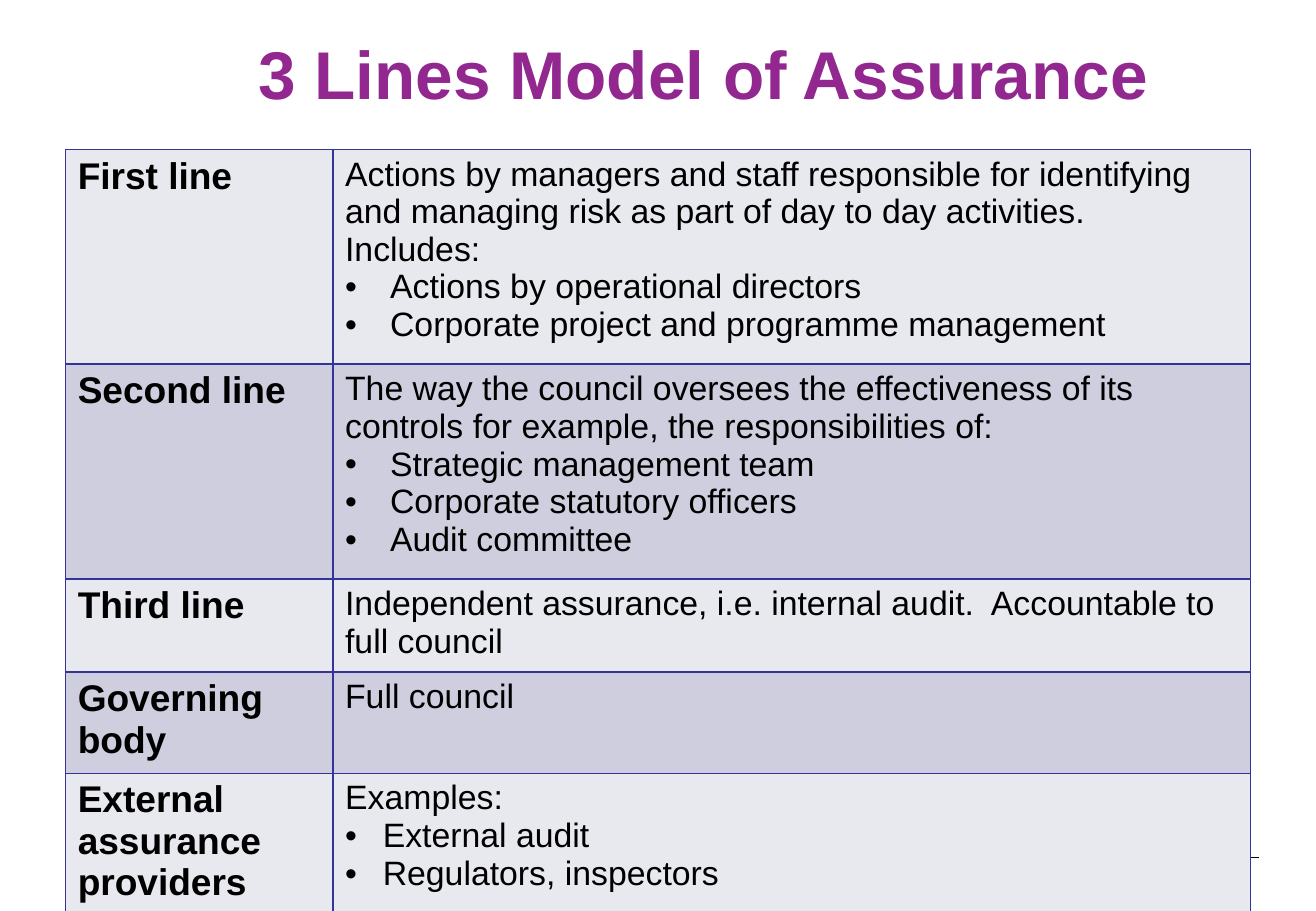
from pptx import Presentation
from pptx import util as u
from pptx.dml.color import RGBColor
from pptx.enum import shapes, text
from pptx.oxml.ns import qn
from lxml import etree

# Content: label, lead text, bullets, bullet indent
TITLE = "3 Lines Model of Assurance"
ROWS = [
    ("First line",
     "Actions by managers and staff responsible for identifying and managing "
     "risk as part of day to day activities.  Includes:",
     ["Actions by operational directors",
      "Corporate project and programme management"], 37),
    ("Second line",
     "The way the council oversees the effectiveness of its controls "
     "for example, the responsibilities of:",
     ["Strategic management team", "Corporate statutory officers",
      "Audit committee"], 37),
    ("Third line",
     "Independent assurance, i.e. internal audit.  Accountable to full council",
     [], 0),
    ("Governing body", "Full council", [], 0),
    ("External assurance providers", "Examples:",
     ["External audit", "Regulators, inspectors"], 31),
]
COLS = (220, 755)
TALL = 48  # least row height; rows grow to fit their text
FILLS = ("E8E8EF", "CECEDE")
BORDER, BLACK, PURPLE = "333399", "000000", "91278F"


def px(n):
    return u.Emu(n * 9144)  # 100 px to the inch


def color(code):
    return RGBColor.from_string(code)


def style(par, size, bold, code=BLACK):
    font = par.font
    font.name, font.size, font.bold = "Arial", u.Pt(size), bold
    font.color.rgb = color(code)


def bullet(par, indent):
    props = par._p.get_or_add_pPr()
    props.set("marL", str(px(indent)))
    props.set("indent", str(-px(indent)))
    etree.SubElement(props, qn("a:buFont"), typeface="Arial")
    etree.SubElement(props, qn("a:buChar"), char="•")


def frame(cell, code):
    cell.fill.solid()
    cell.fill.fore_color.rgb = color(code)
    props = cell._tc.get_or_add_tcPr()
    for i, side in enumerate(("lnL", "lnR", "lnT", "lnB")):
        line = etree.Element(qn("a:" + side), w=str(u.Pt(1)))
        fill = etree.SubElement(line, qn("a:solidFill"))
        etree.SubElement(fill, qn("a:srgbClr"), val=BORDER)
        props.insert(i, line)


def main():
    prs = Presentation()
    prs.slide_width, prs.slide_height = px(1083), px(750)
    slide = prs.slides.add_slide(prs.slide_layouts[6])

    # Footer rule behind the table
    rule = slide.shapes.add_connector(
        shapes.MSO_CONNECTOR.STRAIGHT, px(64), px(706), px(1036), px(706))
    rule.line.color.rgb = color(BLACK)
    rule.line.width = u.Pt(0.75)
    etree.SubElement(rule._element.spPr, qn("a:effectLst"))

    # Title
    head = slide.shapes.add_textbox(px(203), px(28), px(787), px(63)).text_frame
    head.word_wrap = True
    head.vertical_anchor = text.MSO_ANCHOR.MIDDLE
    head.text = TITLE
    style(head.paragraphs[0], 40, True, PURPLE)

    # Table
    table = slide.shapes.add_table(
        len(ROWS), len(COLS), px(54), px(123),
        px(sum(COLS)), px(TALL * len(ROWS))).table
    table.first_row = table.horz_banding = False
    for col, width in zip(table.columns, COLS):
        col.width = px(width)
    for r, (label, lead, items, indent) in enumerate(ROWS):
        name, body = table.cell(r, 0), table.cell(r, 1)
        for cell in (name, body):
            frame(cell, FILLS[r % 2])
        name.text = label
        style(name.text_frame.paragraphs[0], 22, True)
        body.text = lead
        for item in items:
            par = body.text_frame.add_paragraph()
            par.text = item
            bullet(par, indent)
        for par in body.text_frame.paragraphs:
            style(par, 20, False)

    prs.save("out.pptx")


if __name__ == "__main__":
    main()
